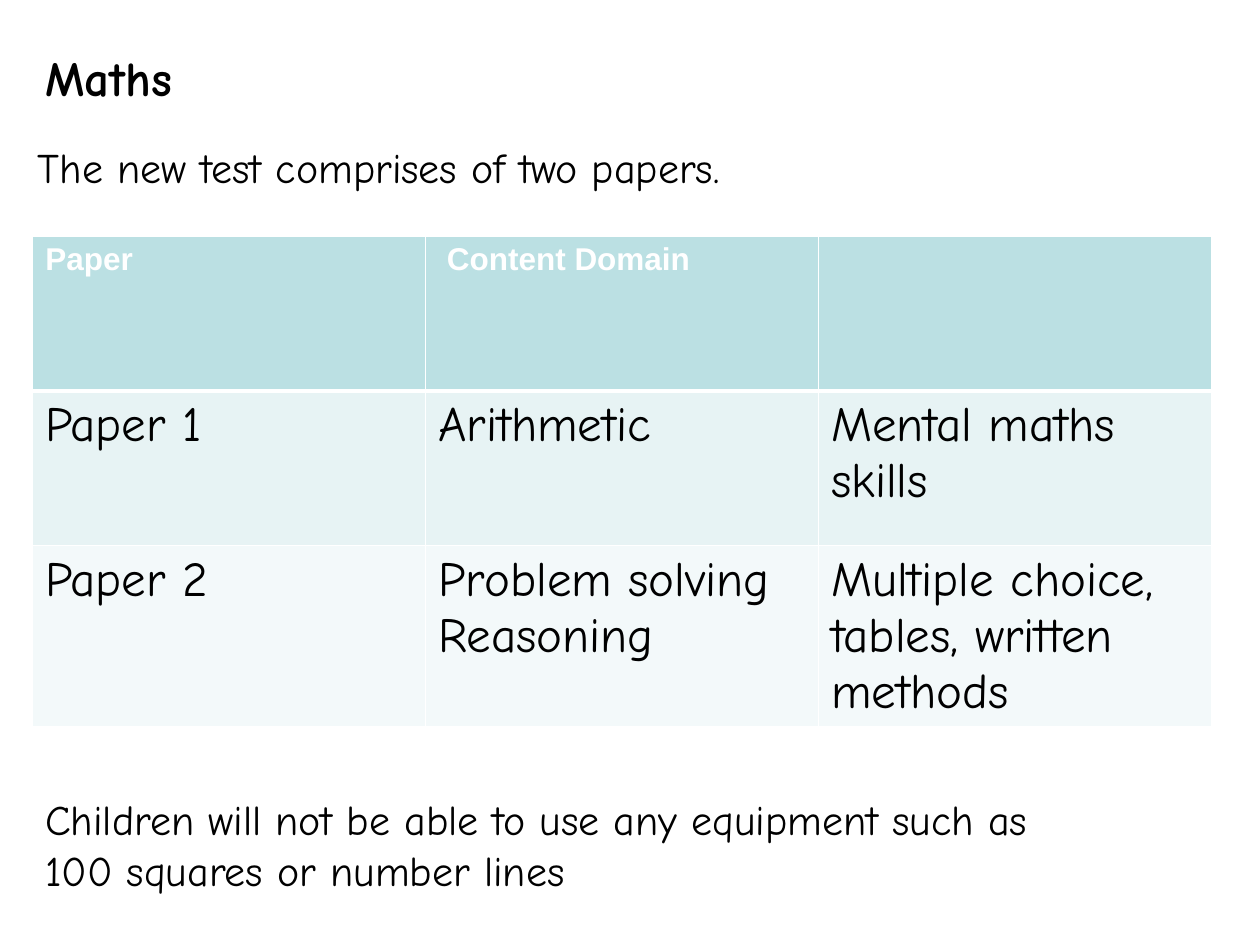
from lxml import etree
from pptx import Presentation
from pptx.dml.color import RGBColor
from pptx.enum.text import MSO_ANCHOR, PP_ALIGN
from pptx.oxml.ns import qn
from pptx.util import Cm, Pt

LEFT, TOP = PP_ALIGN.LEFT, MSO_ANCHOR.TOP
TITLE_ONLY = 5
HAND_FONT, HEADER_FONT = "Comic Neue", "Arial"
BLACK, WHITE = "000000", "FFFFFF"

# Content: text, then left, top, width, height in cm
HEADING = ("Maths", (0.66, 0.84, 6.91, 1.45))
NOTES = [
    ("The new test comprises of two papers.", (0.51, 2.72, 23.06, 1.27)),
    ("Children will not be able to use any equipment such as "
     "100 squares or number lines", (0.66, 15.88, 21.44, 2.31)),
]
PAPERS = [
    ("Paper", " Content Domain", ""),
    ("Paper 1", "Arithmetic", "Mental maths skills"),
    ("Paper 2", "Problem solving\nReasoning",
     "Multiple choice, tables, written methods"),
]
ROW_FILLS = ["BBE0E3", "E7F3F4", "F3F9FA"]
TABLE_LEFT, TABLE_TOP = 0.66, 4.76
COLUMN_WIDTH, ROW_HEIGHT = 7.92, 3.12


def rgb(code):
    return RGBColor.from_string(code)


def write(frame, text, size, font=HAND_FONT, color=BLACK, bold=False):
    frame.text = text
    frame.word_wrap = True
    frame.vertical_anchor = TOP
    for paragraph in frame.paragraphs:
        paragraph.alignment = LEFT
        for run in paragraph.runs:
            run.font.name = font
            run.font.size = Pt(size)
            run.font.bold = bold
            run.font.color.rgb = rgb(color)


def add_border(cell, side, points):
    line = etree.SubElement(cell._tc.get_or_add_tcPr(), qn(f"a:ln{side}"),
                            w=str(Pt(points)))
    fill = etree.SubElement(line, qn("a:solidFill"))
    etree.SubElement(fill, qn("a:srgbClr"), val=WHITE)


prs = Presentation()
prs.slide_width, prs.slide_height = Cm(25.4), Cm(19.05)
slide = prs.slides.add_slide(prs.slide_layouts[TITLE_ONLY])

# Table of papers
rows, columns = len(PAPERS), len(PAPERS[0])
table = slide.shapes.add_table(
    rows, columns, Cm(TABLE_LEFT), Cm(TABLE_TOP),
    Cm(COLUMN_WIDTH * columns), Cm(ROW_HEIGHT * rows)).table
for column in table.columns:
    column.width = Cm(COLUMN_WIDTH)
for r, (paper, row_fill) in enumerate(zip(PAPERS, ROW_FILLS)):
    table.rows[r].height = Cm(ROW_HEIGHT)
    for c, entry in enumerate(paper):
        cell = table.cell(r, c)
        if r == 0:
            write(cell.text_frame, entry, 18, HEADER_FONT, WHITE, True)
        else:
            write(cell.text_frame, entry, 28)
        for side in "LRTB":
            header_rule = (r == 0 and side == "B") or (r == 1 and side == "T")
            add_border(cell, side, 3 if header_rule else 1)
        cell.fill.solid()
        cell.fill.fore_color.rgb = rgb(row_fill)

# Heading
heading_text, heading_box = HEADING
heading = slide.shapes.title
heading.left, heading.top, heading.width, heading.height = map(Cm, heading_box)
write(heading.text_frame, heading_text, 28, bold=True)

# Notes above and below the table
for note, box in NOTES:
    write(slide.shapes.add_textbox(*map(Cm, box)).text_frame, note, 24)

prs.save("out.pptx")
